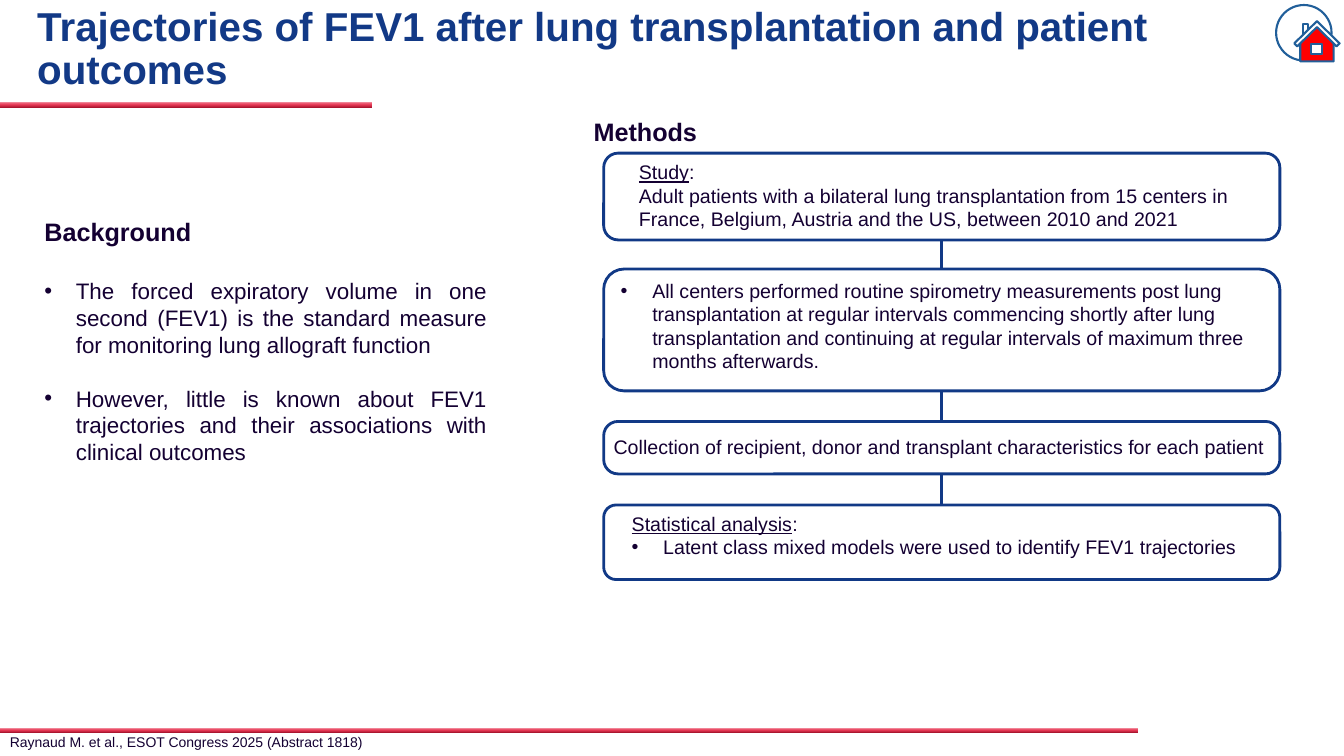
import dataclasses
import typing

import lxml.etree
import pptx
import pptx.dml.color
import pptx.enum.shapes
import pptx.enum.text
import pptx.oxml.ns
import pptx.util

Pt = pptx.util.Pt
Shape = pptx.enum.shapes.MSO_SHAPE
Anchor = pptx.enum.text.MSO_ANCHOR
Align = pptx.enum.text.PP_ALIGN
qn = pptx.oxml.ns.qn


@dataclasses.dataclass(frozen=True)
class Theme:
    font: str = "Arial"
    title: str = "123986"
    ink: str = "140032"
    frame: str = "113986"
    icon: str = "215F9A"
    red: str = "FF0000"
    white: str = "FFFFFF"
    bar: tuple = ((0, "A7142D"), (48, "E73855"), (100, "F08496"))
    title_size: float = 28.8
    heading_size: float = 18
    body_size: float = 16
    step_size: float = 14
    source_size: float = 10
    frame_width: float = 2
    link_width: float = 2.25
    icon_width: float = 1.5
    indent: float = 22.5


class Area(typing.NamedTuple):
    left: float
    top: float
    width: float
    height: float

    def lengths(self) -> list:
        return [Pt(value) for value in self]


class Run(typing.NamedTuple):
    text: str
    underline: bool = False


@dataclasses.dataclass(frozen=True)
class Paragraph:
    runs: tuple
    size: float
    bold: bool = False
    bullet: bool = False
    justify: bool = False
    before: float = 0
    color: str = Theme.ink


@dataclasses.dataclass(frozen=True)
class Step:
    top: float
    height: float
    text_area: Area
    paragraphs: tuple
    corner: float = 0.16667


THEME = Theme()
STEP_LEFT, STEP_WIDTH = 431.2, 483


def step_text(*runs: Run, bullet: bool = False) -> Paragraph:
    return Paragraph(runs, THEME.step_size, bullet=bullet)


BACKGROUND = (
    Paragraph((Run("Background"),), THEME.heading_size, bold=True),
    Paragraph((Run("The forced expiratory volume in one second (FEV1) is the standard measure "
                   "for monitoring lung allograft function"),),
              THEME.body_size, bullet=True, justify=True, before=21.5),
    Paragraph((Run("However, little is known about FEV1 trajectories and their associations "
                   "with clinical outcomes"),),
              THEME.body_size, bullet=True, justify=True, before=19.3),
)

STEPS = (
    Step(109.4, 62, Area(449.3, 110.9, 479.5, 58.3), (
        step_text(Run("Study", True), Run(":")),
        step_text(Run("Adult patients with a bilateral lung transplantation from 15 centers in "
                      "France, Belgium, Austria and the US, between 2010 and 2021")))),
    Step(192.2, 87, Area(436.3, 195.4, 467.3, 75), (
        step_text(Run("All centers performed routine spirometry measurements post lung "
                      "transplantation at regular intervals commencing shortly after lung "
                      "transplantation and continuing at regular intervals of maximum three "
                      "months afterwards."), bullet=True),)),
    Step(301, 37.5, Area(431.2, 307.4, 479.5, 24.5), (
        step_text(Run("Collection of recipient, donor and transplant characteristics "
                      "for each patient")),), 0.273),
    Step(360.7, 53.3, Area(444.2, 362, 479.5, 41), (
        step_text(Run("Statistical analysis", True), Run(":")),
        step_text(Run("Latent class mixed models were used to identify FEV1 trajectories"),
                  bullet=True))),
)

BARS = (Area(0, 72.7, 265.7, 4.3), Area(0, 519.8, 812.9, 3.6))
HOUSE = ((941, 18), (952.6, 28.1), (952.6, 43.9), (928.8, 43.9), (928.8, 28.1))
ROOF = ((940.7, 15.1), (956.9, 31), (954.7, 33.1), (940.7, 19.4), (926.6, 33.1), (924.5, 31))


def rgb(value: str) -> pptx.dml.color.RGBColor:
    return pptx.dml.color.RGBColor.from_string(value)


def paint(shape, fill: str | None, line: str, width: float) -> None:
    shape.shadow.inherit = False
    if fill:
        shape.fill.solid()
        shape.fill.fore_color.rgb = rgb(fill)
    else:
        shape.fill.background()
    shape.line.color.rgb = rgb(line)
    shape.line.width = Pt(width)


def write(frame, paragraphs: tuple) -> None:
    frame.word_wrap = True
    frame.auto_size = pptx.enum.text.MSO_AUTO_SIZE.NONE
    for index, item in enumerate(paragraphs):
        para = frame.paragraphs[0] if index == 0 else frame.add_paragraph()
        properties = para._p.get_or_add_pPr()
        indent = Pt(THEME.indent) if item.bullet else 0
        properties.set("marL", str(indent))
        properties.set("indent", str(-indent))
        if item.bullet:
            lxml.etree.SubElement(properties, qn("a:buFont")).set("typeface", THEME.font)
            lxml.etree.SubElement(properties, qn("a:buChar")).set("char", "•")
        else:
            lxml.etree.SubElement(properties, qn("a:buNone"))
        para.alignment = Align.JUSTIFY if item.justify else Align.LEFT
        para.space_before = Pt(item.before)
        for part in item.runs:
            span = para.add_run()
            span.text = part.text
            span.font.name = THEME.font
            span.font.size = Pt(item.size)
            span.font.bold = item.bold
            span.font.underline = part.underline
            span.font.color.rgb = rgb(item.color)


def place(shape, area: Area) -> None:
    shape.left, shape.top, shape.width, shape.height = area.lengths()


def add_text(page, area: Area, *paragraphs: Paragraph) -> None:
    write(page.shapes.add_textbox(*area.lengths()).text_frame, paragraphs)


def add_bar(page, area: Area) -> None:
    bar = page.shapes.add_shape(Shape.RECTANGLE, *area.lengths())
    bar.shadow.inherit = False
    bar.line.fill.background()
    bar.fill.gradient()
    bar.fill.gradient_angle = 90
    stops = bar._element.spPr.find(qn("a:gradFill")).find(qn("a:gsLst"))
    for stop in list(stops):
        stops.remove(stop)
    for position, color in THEME.bar:
        stop = lxml.etree.SubElement(stops, qn("a:gs"), pos=str(position * 1000))
        lxml.etree.SubElement(stop, qn("a:srgbClr"), val=color)


def add_step(page, step: Step):
    area = Area(STEP_LEFT, step.top, STEP_WIDTH, step.height)
    box = page.shapes.add_shape(Shape.ROUNDED_RECTANGLE, *area.lengths())
    box.adjustments[0] = step.corner
    paint(box, None, THEME.frame, THEME.frame_width)
    add_text(page, step.text_area, *step.paragraphs)
    return box


def link(page, lower, upper) -> None:
    line = page.shapes.add_connector(pptx.enum.shapes.MSO_CONNECTOR.STRAIGHT, 0, 0, 0, 0)
    line.begin_connect(lower, 0)
    line.end_connect(upper, 2)
    line.line.color.rgb = rgb(THEME.frame)
    line.line.width = Pt(THEME.link_width)
    lxml.etree.SubElement(line._element.spPr, qn("a:effectLst"))


def add_home_icon(page) -> None:
    icon = page.shapes.add_group_shape()

    def preset(kind, area: Area, fill: str | None) -> None:
        paint(icon.shapes.add_shape(kind, *area.lengths()), fill, THEME.icon, THEME.icon_width)

    def outline(points: tuple, fill: str) -> None:
        corners = [(Pt(x), Pt(y)) for x, y in points]
        builder = icon.shapes.build_freeform(*corners[0])
        builder.add_line_segments(corners[1:], close=True)
        paint(builder.convert_to_shape(), fill, THEME.icon, THEME.icon_width)

    preset(Shape.OVAL, Area(911.5, 3.6, 39.6, 39.6), None)
    preset(Shape.RECTANGLE, Area(931, 17.3, 3.6, 10), THEME.white)
    outline(HOUSE, THEME.red)
    preset(Shape.RECTANGLE, Area(936.7, 31.7, 7.9, 7.2), THEME.white)
    outline(ROOF, THEME.white)


def main() -> None:
    deck = pptx.Presentation()
    deck.slide_width, deck.slide_height = Pt(960), Pt(540)
    page = deck.slides.add_slide(deck.slide_layouts[1])
    title, body = page.shapes.title, page.placeholders[1]
    place(title, Area(26.6, 4.6, 864, 62))
    frame = title.text_frame
    frame.margin_left = frame.margin_top = frame.margin_right = frame.margin_bottom = 0
    frame.vertical_anchor = Anchor.MIDDLE
    write(frame, (Paragraph(
        (Run("Trajectories of FEV1 after lung transplantation and patient outcomes"),),
        THEME.title_size, bold=True, color=THEME.title),))
    frame.paragraphs[0].line_spacing = 0.9
    place(body, Area(24.5, 151.2, 330.5, 186.5))
    body.text_frame.vertical_anchor = Anchor.TOP
    write(body.text_frame, BACKGROUND)

    for area in BARS:
        add_bar(page, area)
    add_text(page, Area(416.9, 79.9, 433.4, 28.8),
             Paragraph((Run("Methods"),), THEME.heading_size, bold=True))
    boxes = [add_step(page, step) for step in STEPS]
    for upper, lower in zip(boxes, boxes[1:]):
        link(page, lower, upper)
    add_home_icon(page)
    add_text(page, Area(0, 520.6, 480.2, 19.4),
             Paragraph((Run("Raynaud M. et al., ESOT Congress 2025 (Abstract 1818)"),),
                       THEME.source_size))
    deck.save("out.pptx")


if __name__ == "__main__":
    main()
